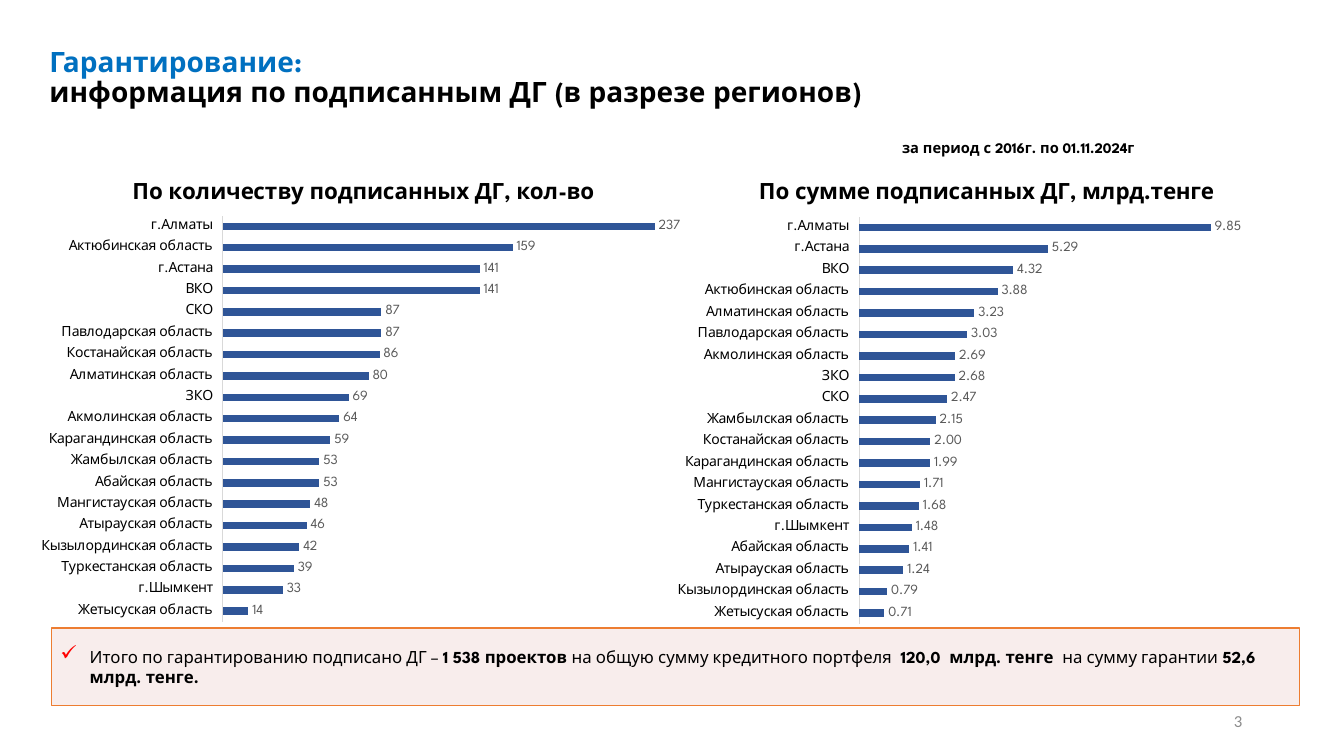
from lxml import etree
from pptx import Presentation
from pptx.chart.data import CategoryChartData
from pptx.dml.color import RGBColor
from pptx.enum.chart import XL_CHART_TYPE as ChartType
from pptx.enum.chart import XL_LABEL_POSITION as LabelPos
from pptx.enum.chart import XL_TICK_LABEL_POSITION as TickLabels
from pptx.enum.chart import XL_TICK_MARK as TickMark
from pptx.enum.shapes import MSO_SHAPE as Shape
from pptx.enum.text import MSO_ANCHOR as Anchor
from pptx.enum.text import MSO_AUTO_SIZE as AutoSize
from pptx.enum.text import PP_ALIGN as Align
from pptx.oxml import parse_xml
from pptx.oxml.ns import nsdecls, qn
from pptx.util import Inches, Pt

COLORS = {
    "accent": "0070C0", "text": "000000", "bar": "2F5597", "label": "595959",
    "axis": "D9D9D9", "panel": "F2DCDB", "border": "ED7D31",
    "check": "FF0000", "number": "8C8C8C",
}
FONT = "League Spartan"


def rgb(name):
    return RGBColor.from_string(COLORS[name])


class RegionSlide:
    def __init__(self, deck):
        self.slide = deck.slides.add_slide(deck.slide_layouts[5])

    def style(self, font, size, color="text", bold=False, name=FONT):
        values = {"name": name, "size": Pt(size), "bold": bold}
        for attribute, value in values.items():
            setattr(font, attribute, value)
        font.color.rgb = rgb(color)

    def run(self, paragraph, text, size, **look):
        piece = paragraph.add_run()
        piece.text = text
        self.style(piece.font, size, **look)

    def setup(self, frame, **values):
        for attribute, value in values.items():
            setattr(frame, attribute, value)

    def title(self, box, first, second):
        heading = self.slide.shapes.title
        heading.left, heading.top, heading.width, heading.height = map(Inches, box)
        self.setup(heading.text_frame, word_wrap=True, vertical_anchor=Anchor.TOP,
                   auto_size=AutoSize.SHAPE_TO_FIT_TEXT)
        paragraph = heading.text_frame.paragraphs[0]
        self.setup(paragraph, alignment=Align.LEFT, line_spacing=0.9)
        self.run(paragraph, first, 20, color="accent", bold=True)
        paragraph.add_line_break()
        self.run(paragraph, second, 20, bold=True)

    def text(self, box, words, size, align=Align.LEFT, wrap=True,
             anchor=Anchor.TOP, **look):
        frame = self.slide.shapes.add_textbox(*map(Inches, box)).text_frame
        self.setup(frame, word_wrap=wrap, vertical_anchor=anchor)
        paragraph = frame.paragraphs[0]
        paragraph.alignment = align
        self.run(paragraph, words, size, **look)

    def summary(self, box, pieces):
        panel = self.slide.shapes.add_shape(Shape.RECTANGLE, *map(Inches, box))
        panel.shadow.inherit = False
        panel.fill.solid()
        panel.fill.fore_color.rgb = rgb("panel")
        # Half-transparent fill
        tint = panel.fill._xPr.find(qn("a:solidFill"))[0]
        etree.SubElement(tint, qn("a:alpha"), val="50000")
        panel.line.color.rgb = rgb("border")
        panel.line.width = Pt(1)
        self.setup(panel.text_frame, word_wrap=True, vertical_anchor=Anchor.MIDDLE,
                   margin_left=Inches(0.08), margin_right=Inches(0.08),
                   margin_top=Inches(0.04), margin_bottom=Inches(0.04))
        paragraph = panel.text_frame.paragraphs[0]
        self.setup(paragraph, alignment=Align.LEFT, space_after=Pt(6))
        # Hanging check mark
        props = paragraph._p.get_or_add_pPr()
        props.set("marL", str(Inches(0.3)))
        props.set("indent", str(Inches(-0.29)))
        color = etree.SubElement(props, qn("a:buClr"))
        etree.SubElement(color, qn("a:srgbClr"), val=COLORS["check"])
        etree.SubElement(props, qn("a:buSzPct"), val="125000")
        etree.SubElement(props, qn("a:buChar"), char="✓")
        for words, bold in pieces:
            self.run(paragraph, words, 12, bold=bold)

    def bars(self, box, plot_box, heading, values, maximum, number_format):
        data = CategoryChartData(number_format=number_format)
        data.categories = list(values)
        data.add_series("Series 1", list(values.values()))
        chart = self.slide.shapes.add_chart(
            ChartType.BAR_CLUSTERED, *map(Inches, box), data).chart
        self.style(chart.font, 10)
        chart.has_legend = False
        chart.has_title = True
        paragraph = chart.chart_title.text_frame.paragraphs[0]
        self.run(paragraph, heading, 16, bold=True)

        # Axes
        regions, scale = chart.category_axis, chart.value_axis
        self.setup(regions, major_tick_mark=TickMark.NONE,
                   minor_tick_mark=TickMark.NONE, has_major_gridlines=False,
                   tick_label_position=TickLabels.LOW)
        self.style(regions.tick_labels.font, 10)
        regions.format.line.color.rgb = rgb("axis")
        regions.format.line.width = Pt(0.75)
        self.setup(scale, visible=False, has_major_gridlines=False,
                   minimum_scale=0, maximum_scale=maximum)

        # Bars and their values
        plot = chart.plots[0]
        self.setup(plot, gap_width=182, vary_by_categories=False, has_data_labels=True)
        fill = plot.series[0].format.fill
        fill.solid()
        fill.fore_color.rgb = rgb("bar")
        self.setup(plot.data_labels, show_value=True, position=LabelPos.OUTSIDE_END,
                   number_format=number_format, number_format_is_linked=False)
        self.style(plot.data_labels.font, 10, color="label")

        # Plot area placed as fractions of the chart frame
        left, top, width, height = box
        x, y, w, h = plot_box
        fractions = {"x": (x - left) / width, "y": (y - top) / height,
                     "w": w / width, "h": h / height}
        area = chart._chartSpace.chart.plotArea
        for old in area.findall(qn("c:layout")):
            area.remove(old)
        sides = "".join(f'<c:{side}Mode val="edge"/>' for side in "xy")
        sizes = "".join(f'<c:{key} val="{part:.4f}"/>' for key, part in fractions.items())
        area.insert(0, parse_xml(
            f'<c:layout {nsdecls("c")}><c:manualLayout><c:layoutTarget val="inner"/>'
            f'{sides}{sizes}</c:manualLayout></c:layout>'))


COUNTS = {
    "Жетысуская область": 14, "г.Шымкент": 33, "Туркестанская область": 39,
    "Кызылординская область": 42, "Атырауская область": 46,
    "Мангистауская область": 48, "Абайская область": 53,
    "Жамбылская область": 53, "Карагандинская область": 59,
    "Акмолинская область": 64, "ЗКО": 69, "Алматинская область": 80,
    "Костанайская область": 86, "Павлодарская область": 87, "СКО": 87,
    "ВКО": 141, "г.Астана": 141, "Актюбинская область": 159, "г.Алматы": 237,
}
SUMS = {
    "Жетысуская область": 0.71, "Кызылординская область": 0.79,
    "Атырауская область": 1.24, "Абайская область": 1.41, "г.Шымкент": 1.48,
    "Туркестанская область": 1.68, "Мангистауская область": 1.71,
    "Карагандинская область": 1.99, "Костанайская область": 2,
    "Жамбылская область": 2.15, "СКО": 2.47, "ЗКО": 2.68,
    "Акмолинская область": 2.69, "Павлодарская область": 3.03,
    "Алматинская область": 3.23, "Актюбинская область": 3.88, "ВКО": 4.32,
    "г.Астана": 5.29, "г.Алматы": 9.85,
}
TOTALS = [
    ("Итого по гарантированию подписано ДГ – ", False),
    ("1 538 проектов ", True),
    ("на общую сумму кредитного портфеля  ", False),
    ("120,0  млрд. тенге  ", True),
    ("на сумму гарантии", False),
    (" 52,6 млрд. тенге.", True),
]


def main():
    deck = Presentation()
    deck.slide_width, deck.slide_height = Inches(13.33), Inches(7.5)
    page = RegionSlide(deck)

    # Heading and period
    page.title((0.39, 0.43, 8.58, 0.77), "Гарантирование: ",
               "информация по подписанным ДГ (в разрезе регионов)")
    page.text((8.85, 1.33, 2.64, 0.28), "за период с 2016г. по 01.11.2024г",
              10.5, wrap=False, bold=True)

    # Totals and page number
    page.summary((0.51, 6.23, 12.38, 0.77), TOTALS)
    page.text((9.42, 6.95, 3, 0.4), "3", 12, align=Align.RIGHT,
              anchor=Anchor.MIDDLE, color="number", name="Calibri")

    # Charts by region
    page.bars((0.35, 1.61, 6.51, 4.67), (2.21, 2.14, 4.52, 4.03),
              "По количеству подписанных ДГ, кол-во", COUNTS, 250, "General")
    page.bars((6.67, 1.61, 6.23, 4.69), (8.52, 2.15, 4.25, 4.04),
              "По сумме подписанных ДГ, млрд.тенге", SUMS, 12, "#,##0.00")
    deck.save("out.pptx")


if __name__ == "__main__":
    main()
